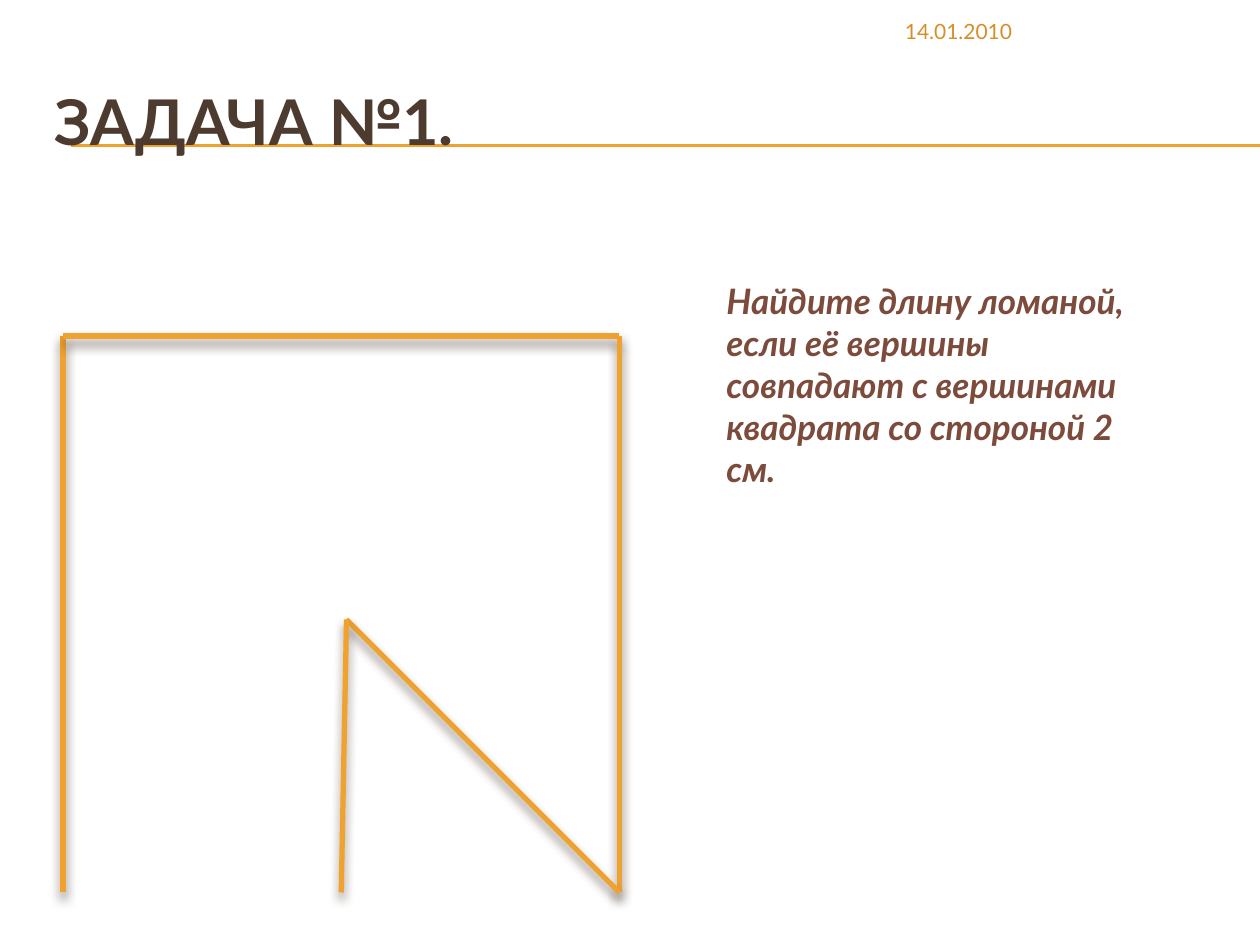
from itertools import pairwise

from lxml.etree import SubElement
from pptx import Presentation
from pptx.dml.color import RGBColor
from pptx.enum.shapes import MSO_CONNECTOR
from pptx.enum.text import MSO_ANCHOR
from pptx.oxml.ns import qn
from pptx.util import Pt

THEME = {
    "font": "Lato",
    "title": ("4E3B30", 36),
    "date": ("D48F29", 12),
    "task": ("7C4B3B", 20),
    "line": "F0A22E",
    "shadow": "4E3B30",
    "rule_width": 0.75,
    "polyline_width": 3,
}

SLIDE_SIZE = (720, 540)
RULE_LEFT, RULE_LEVELS = 40.5, (82.8, 83.5)
POLYLINE = [(36, 510), (36, 192), (354, 192), (354, 510), (198, 354), (195, 510)]

TEXTS = [
    ("title", "ЗАДАЧА №1.", (24, 36, 684, 66), MSO_ANCHOR.MIDDLE, True, False),
    ("date", "14.01.2010", (510, 6, 198, 23), MSO_ANCHOR.MIDDLE, False, False),
    ("task",
     "Найдите длину ломаной, если её вершины совпадают с вершинами квадрата со стороной 2 см.",
     (408, 156, 264, 128), MSO_ANCHOR.TOP, True, True),
]


def add_line(slide, start, end, width, shadowed=False):
    line = slide.shapes.add_connector(
        MSO_CONNECTOR.STRAIGHT, *(Pt(value) for value in (*start, *end)))
    line.line.color.rgb = RGBColor.from_string(THEME["line"])
    line.line.width = Pt(width)
    effects = SubElement(line._element.spPr, qn("a:effectLst"))
    if shadowed:
        shadow = SubElement(effects, qn("a:outerShdw"), blurRad=str(Pt(6)),
                            dist=str(Pt(4)), dir="5400000", rotWithShape="0")
        color = SubElement(shadow, qn("a:srgbClr"), val=THEME["shadow"])
        SubElement(color, qn("a:alpha"), val="60000")


def add_text(slide, role, wording, box, anchor, bold, italic):
    frame = slide.shapes.add_textbox(*(Pt(value) for value in box)).text_frame
    frame.word_wrap = True
    frame.vertical_anchor = anchor
    paragraph = frame.paragraphs[0]
    paragraph.text = wording
    color, size = THEME[role]
    font = paragraph.font
    font.name = THEME["font"]
    font.size = Pt(size)
    font.bold = bold
    font.italic = italic
    font.color.rgb = RGBColor.from_string(color)


def main():
    presentation = Presentation()
    presentation.slide_width, presentation.slide_height = map(Pt, SLIDE_SIZE)
    slide = presentation.slides.add_slide(presentation.slide_layouts[6])

    for level in RULE_LEVELS:
        add_line(slide, (RULE_LEFT, level), (SLIDE_SIZE[0], level), THEME["rule_width"])
    for start, end in pairwise(POLYLINE):
        add_line(slide, start, end, THEME["polyline_width"], shadowed=True)
    for entry in TEXTS:
        add_text(slide, *entry)

    presentation.save("out.pptx")


if __name__ == "__main__":
    main()
